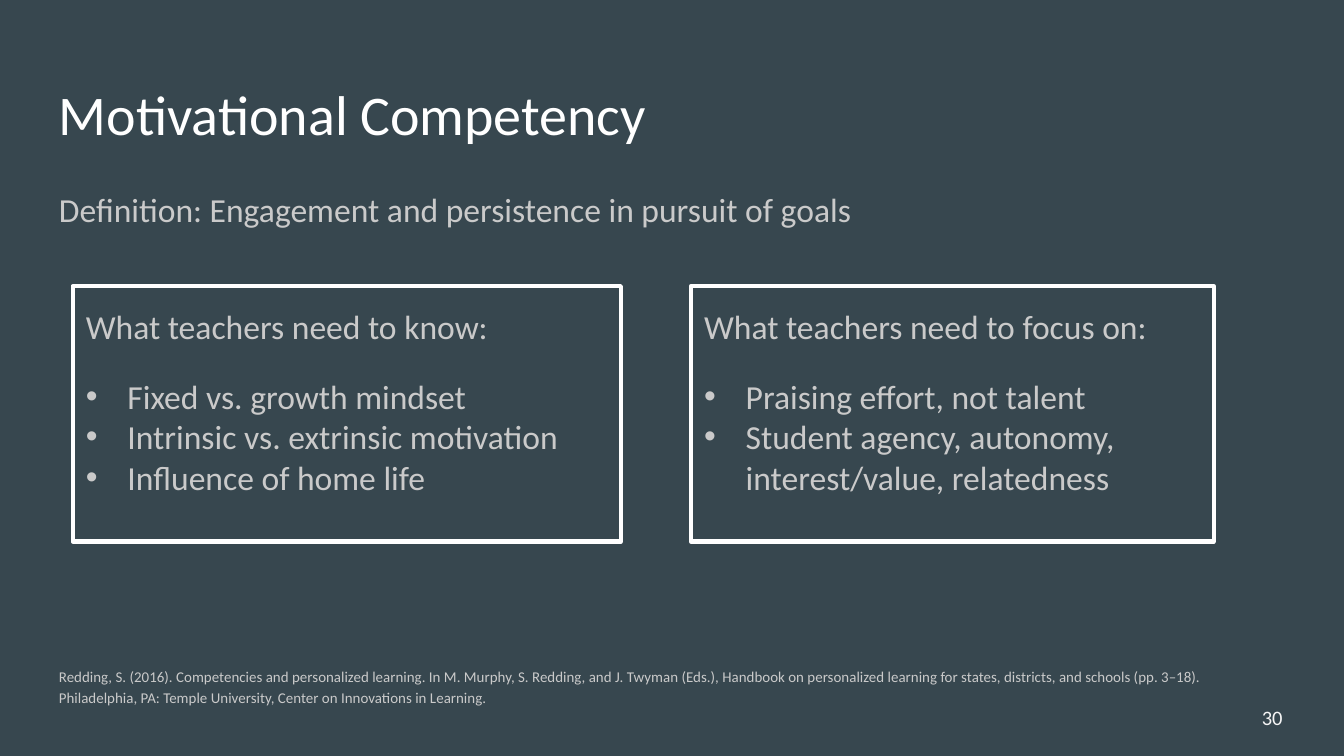
from dataclasses import dataclass

from lxml import etree
from pptx import Presentation
from pptx.dml.color import RGBColor
from pptx.enum.shapes import MSO_SHAPE
from pptx.enum.text import MSO_ANCHOR, PP_ALIGN
from pptx.oxml.ns import qn
from pptx.util import Inches, Pt

RECT = MSO_SHAPE.RECTANGLE
TOP, MIDDLE = MSO_ANCHOR.TOP, MSO_ANCHOR.MIDDLE
LEFT = PP_ALIGN.LEFT


@dataclass(frozen=True)
class Theme:
    """Colours, font and type sizes of the slide."""
    font: str = "Calibri"
    bg: str = "37474F"
    white: str = "FFFFFF"
    body: str = "CACACA"
    number: str = "F5F5F5"
    title_size: int = 30
    body_size: int = 18
    number_size: int = 11
    source_size: int = 8
    spacing: float = 1.15
    after: int = 16
    inset: float = 0.1
    indent: float = 0.31
    border: float = 2.25


T = Theme()


def rgb(value):
    """Turn a hex string into a colour."""
    return RGBColor.from_string(value)


def add_bullet(p):
    """Give a paragraph a hanging round bullet."""
    pPr = p._p.get_or_add_pPr()
    pPr.set("marL", str(Inches(T.indent)))
    pPr.set("indent", str(-Inches(T.indent)))
    clr = etree.SubElement(pPr, qn("a:buClr"))
    etree.SubElement(clr, qn("a:srgbClr"), val=T.body)
    etree.SubElement(pPr, qn("a:buFont"), typeface="Arial")
    etree.SubElement(pPr, qn("a:buChar"), char="•")


def write(p, text, size=T.body_size, color=T.body, spacing=1.0, after=0, bullet=False):
    """Fill one paragraph with formatted text."""
    p.alignment = LEFT
    p.line_spacing = spacing
    p.space_after = Pt(after)
    if bullet:
        add_bullet(p)
    r = p.add_run()
    r.text = text
    r.font.name = T.font
    r.font.size = Pt(size)
    r.font.color.rgb = rgb(color)


def set_frame(tf, anchor=TOP):
    """Set wrapping, insets and anchor of a text frame."""
    tf.word_wrap = True
    tf.vertical_anchor = anchor
    tf.margin_left = tf.margin_right = Inches(T.inset)
    tf.margin_top = tf.margin_bottom = Inches(T.inset)


def add_text(s, box, text, anchor=TOP, **fmt):
    """Place a one-paragraph text box."""
    tf = s.shapes.add_textbox(*map(Inches, box)).text_frame
    set_frame(tf, anchor)
    write(tf.paragraphs[0], text, **fmt)


def add_panel(s, box, heading, items):
    """Place an outlined panel with a heading and bulleted items."""
    sp = s.shapes.add_shape(RECT, *map(Inches, box))
    sp.shadow.inherit = False
    sp.fill.background()
    sp.line.color.rgb = rgb(T.white)
    sp.line.width = Pt(T.border)
    tf = sp.text_frame
    set_frame(tf)
    write(tf.paragraphs[0], heading, spacing=T.spacing, after=T.after)
    for item in items:
        write(tf.add_paragraph(), item, bullet=True)


def add_competency(s, box, title, definition, panels, source, number):
    """Place the title, definition, panels, source and page number in a box."""
    x, y, w, _ = box
    text_x, text_w = x + 0.34, w - 0.68
    add_text(s, (text_x, y + 0.49, text_w, 0.63), title,
             size=T.title_size, color=T.white)
    add_text(s, (text_x, y + 1.26, text_w, 0.6), definition, spacing=T.spacing)
    for left, width, heading, items in panels:
        add_panel(s, (x + left, y + 2.13, width, 1.9), heading, items)
    add_text(s, (text_x, y + 4.85, text_w - 0.12, 0.5), source,
             size=T.source_size, spacing=T.spacing)
    add_text(s, (x + w - 0.71, y + 5.12, 0.6, 0.43), number, anchor=MIDDLE,
             size=T.number_size, color=T.number)


def main():
    """Build and save the slide."""
    prs = Presentation()
    width = 10
    height = width * 9 / 16
    prs.slide_width, prs.slide_height = Inches(width), Inches(height)
    s = prs.slides.add_slide(prs.slide_layouts[6])
    s.background.fill.solid()
    s.background.fill.fore_color.rgb = rgb(T.bg)
    panels = [
        (0.54, 4.08, "What teachers need to know:",
         ["Fixed vs. growth mindset",
          "Intrinsic vs. extrinsic motivation",
          "Influence of home life"]),
        (5.14, 3.89, "What teachers need to focus on:",
         ["Praising effort, not talent",
          "Student agency, autonomy, interest/value, relatedness"]),
    ]
    source = (
        "Redding, S. (2016). Competencies and personalized learning. "
        "In M. Murphy, S. Redding, and J. Twyman (Eds.), Handbook on personalized "
        "learning for states, districts, and schools (pp. 3–18). "
        "Philadelphia, PA: Temple University, Center on Innovations in Learning."
    )
    add_competency(s, (0, 0, width, height), "Motivational Competency",
                   "Definition: Engagement and persistence in pursuit of goals",
                   panels, source, "30")
    prs.save("out.pptx")


if __name__ == "__main__":
    main()
